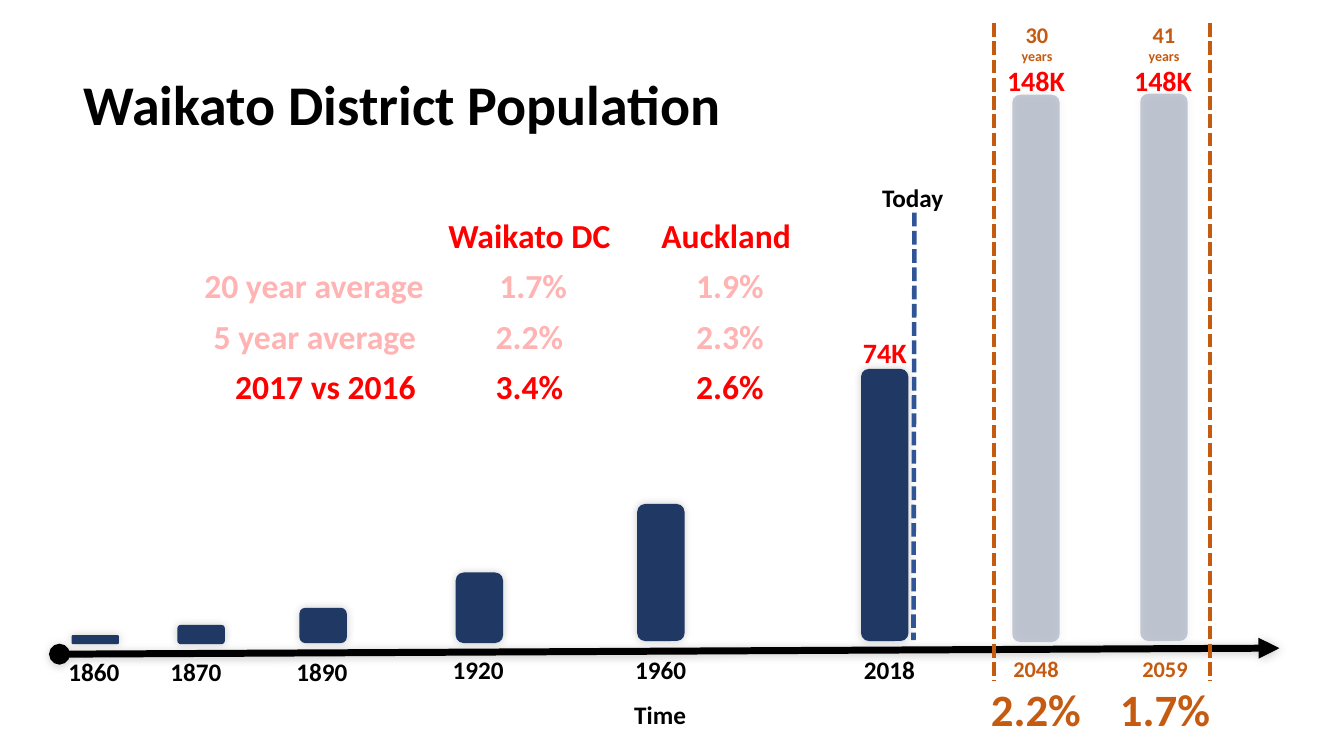
from lxml.etree import SubElement
from pptx import Presentation
from pptx.dml.color import RGBColor
from pptx.enum.dml import MSO_LINE
from pptx.enum.shapes import MSO_CONNECTOR, MSO_SHAPE
from pptx.enum.text import MSO_ANCHOR, MSO_AUTO_SIZE, PP_ALIGN
from pptx.oxml.ns import qn
from pptx.util import Inches, Pt

NAVY, BLUE, ORANGE = "203864", "2F5597", "C55A11"
RED, BLACK, WHITE = "FF0000", "000000", "FFFFFF"
BAR_WIDTH = 0.47

PAST_BARS = [
    ("1860", 0.71, 6.3, 0.09, 0.58, 6.46),
    ("1870", 1.76, 6.2, 0.19, 1.59, 6.46),
    ("1890", 2.97, 6.03, 0.35, 2.84, 6.46),
    ("1920", 4.52, 5.68, 0.7, 4.39, 6.44),
    ("1960", 6.32, 5, 1.36, 6.2, 6.44),
    ("2018", 8.54, 3.66, 2.7, 8.47, 6.44),
]
FORECASTS = [
    ("2048", "2.2%", "30", 10.04, 0.94, 9.69, 9.68, 1.21, 9.89),
    ("2059", "1.7%", "41", 11.31, 0.93, 10.97, 10.43, 2.23, 11.15),
]
GROWTH_RATES = [
    ("", "Waikato DC", "Auckland "),
    ("20 year average ", " 1.7%", "1.9%"),
    ("5 year average ", "2.2%", "2.3%"),
    ("2017 vs 2016 ", "3.4%", "2.6%"),
]


def rgb(color):
    return RGBColor.from_string(color)


def format_paragraph(paragraph, size, color, align):
    paragraph.alignment = align
    font = paragraph.font
    font.name = "Calibri"
    font.size = Pt(size)
    font.bold = True
    font.color.rgb = rgb(color)


def add_text(slide, left, top, width, height, lines, color, align=PP_ALIGN.LEFT):
    box = slide.shapes.add_textbox(Inches(left), Inches(top), Inches(width), Inches(height))
    frame = box.text_frame
    frame.word_wrap = True
    frame.auto_size = MSO_AUTO_SIZE.SHAPE_TO_FIT_TEXT
    frame.text = "\n".join(text for text, size in lines)
    for paragraph, (text, size) in zip(frame.paragraphs, lines):
        format_paragraph(paragraph, size, color, align)


def add_soft_shadow(effects):
    shadow = SubElement(effects, qn("a:outerShdw"), blurRad=str(Pt(6)), dist="0",
                        dir="18900000", algn="bl", rotWithShape="0")
    color = SubElement(shadow, qn("a:srgbClr"), val=BLACK)
    SubElement(color, qn("a:alpha"), val="20000")


def add_block(slide, kind, left, top, width, height, color, opacity=100):
    shape = slide.shapes.add_shape(kind, Inches(left), Inches(top), Inches(width), Inches(height))
    shape.shadow.inherit = False
    shape.fill.solid()
    shape.fill.fore_color.rgb = rgb(color)
    shape.line.fill.background()
    if opacity < 100:
        fill_color = shape._element.spPr.find(qn("a:solidFill")).find(qn("a:srgbClr"))
        SubElement(fill_color, qn("a:alpha"), val=str(opacity * 1000))
    return shape


def add_bar(slide, left, top, height, opacity=100):
    bar = add_block(slide, MSO_SHAPE.ROUNDED_RECTANGLE, left, top, BAR_WIDTH, height, NAVY, opacity)
    add_soft_shadow(bar._element.spPr.find(qn("a:effectLst")))


def add_line(slide, start, end, color, width):
    connector = slide.shapes.add_connector(
        MSO_CONNECTOR.STRAIGHT, *(Inches(value) for value in (*start, *end)))
    connector.line.color.rgb = rgb(color)
    connector.line.width = Pt(width)
    SubElement(connector._element.spPr, qn("a:effectLst"))
    return connector


def add_dashed_line(slide, start, end, color):
    add_line(slide, start, end, color, 3.25).line.dash_style = MSO_LINE.SQUARE_DOT


def add_time_axis(slide):
    axis = add_line(slide, (0.59, 6.49), (12.69, 6.43), BLACK, 5)
    properties = axis._element.spPr
    outline = properties.find(qn("a:ln"))
    SubElement(outline, qn("a:headEnd"), type="oval")
    SubElement(outline, qn("a:tailEnd"), type="triangle")
    add_soft_shadow(properties.find(qn("a:effectLst")))


def add_title(slide):
    title = slide.shapes.title
    title.left, title.top = Inches(0.73), Inches(0.64)
    title.width, title.height = Inches(6.69), Inches(0.77)
    frame = title.text_frame
    frame.text = "Waikato District Population"
    frame.auto_size = MSO_AUTO_SIZE.NONE
    frame.vertical_anchor = MSO_ANCHOR.TOP
    format_paragraph(frame.paragraphs[0], 40, BLACK, PP_ALIGN.LEFT)


def add_growth_table(slide):
    table = slide.shapes.add_table(
        4, 3, Inches(1.91), Inches(2.1), Inches(6.37), Inches(2)).table
    table.first_row = table.horz_banding = False
    for column, width in zip(table.columns, (2.39, 1.9, 2.08)):
        column.width = Inches(width)
    for row, texts in zip(table.rows, GROWTH_RATES):
        row.height = Inches(0.5)
        for index, (cell, text) in enumerate(zip(row.cells, texts)):
            cell.fill.background()
            cell.margin_top = cell.margin_bottom = Inches(0.04)
            cell.vertical_anchor = MSO_ANCHOR.MIDDLE
            cell.text = text
            align = PP_ALIGN.CENTER if index else PP_ALIGN.RIGHT
            format_paragraph(cell.text_frame.paragraphs[0], 24, RED, align)


def add_forecast(slide, year, rate, span, left, top, year_left, span_left, span_width, value_left):
    add_bar(slide, left, top, 5.43, 25)
    add_text(slide, span_left, 0.16, span_width, 0.54, [(span, 16), ("years", 10)],
             ORANGE, PP_ALIGN.CENTER)
    add_text(slide, value_left, 0.58, 0.97, 0.44, [("148K", 20)], RED)
    add_text(slide, year_left, 6.45, 1.17, 0.91, [(year, 16), (rate, 32)],
             ORANGE, PP_ALIGN.CENTER)


def main():
    presentation = Presentation()
    presentation.slide_width = Inches(13.33)
    presentation.slide_height = Inches(7.5)
    slide = presentation.slides.add_slide(presentation.slide_layouts[5])

    add_title(slide)
    add_text(slide, 0, 6.89, 13.15, 0.4, [("Time ", 18)], BLACK, PP_ALIGN.CENTER)
    add_time_axis(slide)
    for year, left, top, height, label_left, label_top in PAST_BARS:
        add_bar(slide, left, top, height)
        add_text(slide, label_left, label_top, 0.81, 0.4, [(year, 18)], BLACK)
    add_text(slide, 8.46, 3.28, 0.81, 0.44, [("74K", 20)], RED)

    add_dashed_line(slide, (9.07, 2.11), (9.06, 6.35), BLUE)
    add_text(slide, 8.65, 1.76, 0.81, 0.4, [("Today", 18)], BLACK)
    for forecast in FORECASTS:
        add_forecast(slide, *forecast)
    for x in (9.86, 12):
        add_dashed_line(slide, (x, 0.23), (x, 6.75), ORANGE)

    add_growth_table(slide)
    add_block(slide, MSO_SHAPE.RECTANGLE, 1.7, 2.69, 6.6, 0.97, WHITE, 70)
    presentation.save("out.pptx")


if __name__ == "__main__":
    main()
